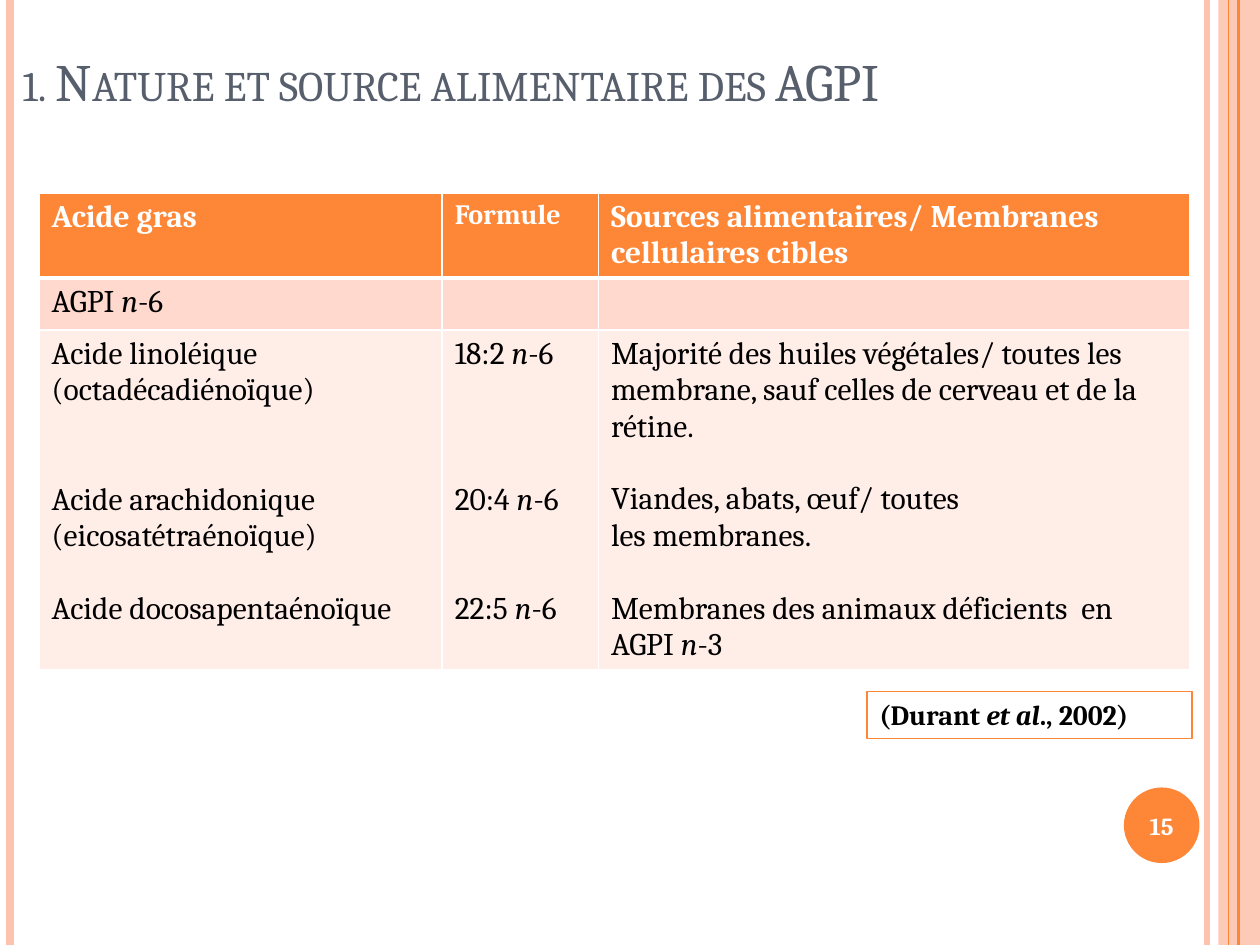
from lxml.etree import SubElement
from pptx import Presentation
from pptx.dml.color import RGBColor
from pptx.enum.shapes import MSO_CONNECTOR, MSO_SHAPE
from pptx.enum.text import MSO_ANCHOR, MSO_AUTO_SIZE, PP_ALIGN
from pptx.oxml.ns import qn
from pptx.util import Inches, Pt

HUES = {
    "orange": "FE8637", "peach": "FEC3AE", "slate": "575F6D",
    "white": "FFFFFF", "black": "000000", "band": "FFD9CE", "pale": "FFEDE8",
}
GAP = 20.8  # points in one empty line of table text


def tint(name):
    return RGBColor.from_string(HUES[name])


def write(par, text, size, hue, bold=False):
    """Add runs; text between asterisks is italic."""
    for i, part in enumerate(text.split("*")):
        if part:
            run = par.add_run()
            run.text = part
            font = run.font
            font.name, font.size, font.bold = "Cambria", Pt(size), bold
            font.italic = i % 2 == 1
            font.color.rgb = tint(hue)


deck = Presentation()
deck.slide_width, deck.slide_height = Inches(10), Inches(7.5)
slide = deck.slides.add_slide(deck.slide_layouts[5])
shapes = slide.shapes

# Side band and vertical rules
band = shapes.add_shape(MSO_SHAPE.RECTANGLE, Inches(9.67), 0, Inches(0.33), Inches(7.5))
band.shadow.inherit = False
band.fill.solid()
band.fill.fore_color.rgb = tint("peach")
SubElement(band.fill._xPr.find(".//" + qn("a:srgbClr")), qn("a:alpha"), val="87000")
band.line.fill.background()

for x, hue, width in [(9.58, "peach", 3), (0.08, "peach", 4.5),
                      (9.83, "orange", 1.5), (9.75, "orange", 0.75)]:
    # The rule beside the band is thin, the one inside it sits at its left
    rule = shapes.add_connector(MSO_CONNECTOR.STRAIGHT, Inches(x), 0, Inches(x), Inches(7.5))
    rule.line.color.rgb = tint(hue)
    rule.line.width = Pt(width)
    SubElement(rule._element.spPr, qn("a:effectLst"))

# Page number
disc = shapes.add_shape(MSO_SHAPE.OVAL, Inches(8.92), Inches(6.25), Inches(0.6), Inches(0.6))
disc.shadow.inherit = False
disc.fill.solid()
disc.fill.fore_color.rgb = tint("orange")
disc.line.fill.background()
frame = disc.text_frame
frame.margin_left = frame.margin_right = 0
frame.vertical_anchor = MSO_ANCHOR.MIDDLE
frame.paragraphs[0].alignment = PP_ALIGN.CENTER
write(frame.paragraphs[0], "15", 14, "white", True)

# Title
title = shapes.title
title.left, title.top = Inches(0.08), Inches(-0.31)
title.width, title.height = Inches(9.69), Inches(1.25)
frame = title.text_frame
frame.word_wrap = True
frame.auto_size = MSO_AUTO_SIZE.NONE
frame.vertical_anchor = MSO_ANCHOR.BOTTOM
head = frame.paragraphs[0]
head.alignment = PP_ALIGN.LEFT
write(head, "1. Nature et source alimentaire des AGPI", 30, "slate")
head.runs[0].font._element.set("cap", "small")

# Table: each cell lists (empty lines above, text)
rows = [
    [[(0, "Acide gras")], [(0, "Formule")],
     [(0, "Sources alimentaires/ Membranes cellulaires cibles")]],
    [[(0, "AGPI *n*-6")], [], []],
    [[(0, "Acide linoléique (octadécadiénoïque)"),
      (2, "Acide arachidonique (eicosatétraénoïque)"),
      (1, "Acide docosapentaénoïque")],
     [(0, "18:2 *n*-6"), (3, "20:4 *n*-6"), (2, "22:5 *n*-6")],
     [(0, "Majorité des huiles végétales/ toutes les membrane, "
          "sauf celles de cerveau et de la rétine."),
      (1, "Viandes, abats, œuf/ toutes\nles membranes."),
      (1, "Membranes des animaux déficients  en AGPI *n*-3")]],
]
fills = ["orange", "band", "pale"]
table = shapes.add_table(3, 3, Inches(0.31), Inches(1.53), Inches(9.13), Inches(3.77)).table
for col, width in zip(table.columns, [3.2, 1.24, 4.69]):
    col.width = Inches(width)
for row, height in zip(table.rows, [0.67, 0.41, 2.69]):
    row.height = Inches(height)

for r, row in enumerate(rows):
    for c, items in enumerate(row):
        cell = table.cell(r, c)
        props = cell._tc.get_or_add_tcPr()
        for side in "LRTB":
            thick = 3 if (r, side) in [(0, "B"), (1, "T")] else 1
            edge = SubElement(props, qn("a:ln" + side), w=str(Pt(thick)))
            paint = SubElement(edge, qn("a:solidFill"))
            SubElement(paint, qn("a:srgbClr"), val=HUES["white"])
        cell.fill.solid()
        cell.fill.fore_color.rgb = tint(fills[r])
        size = 16 if (r, c) == (0, 1) else 18
        hue = "black" if r else "white"
        frame = cell.text_frame
        for i, (gap, text) in enumerate(items):
            par = frame.add_paragraph() if i else frame.paragraphs[0]
            par.space_before = Pt(gap * GAP)
            for j, line in enumerate(text.split("\n")):
                if j:
                    par.add_line_break()
                write(par, line, size, hue, r == 0)

# Reference
cite = shapes.add_shape(MSO_SHAPE.RECTANGLE, Inches(6.88), Inches(5.49), Inches(2.58), Inches(0.37))
cite.shadow.inherit = False
cite.fill.background()
cite.line.color.rgb = tint("orange")
cite.line.width = Pt(0.75)
frame = cite.text_frame
frame.word_wrap = True
frame.vertical_anchor = MSO_ANCHOR.TOP
frame.paragraphs[0].alignment = PP_ALIGN.LEFT
write(frame.paragraphs[0], "(Durant *et al*., 2002)", 16, "black", True)

deck.save("out.pptx")
